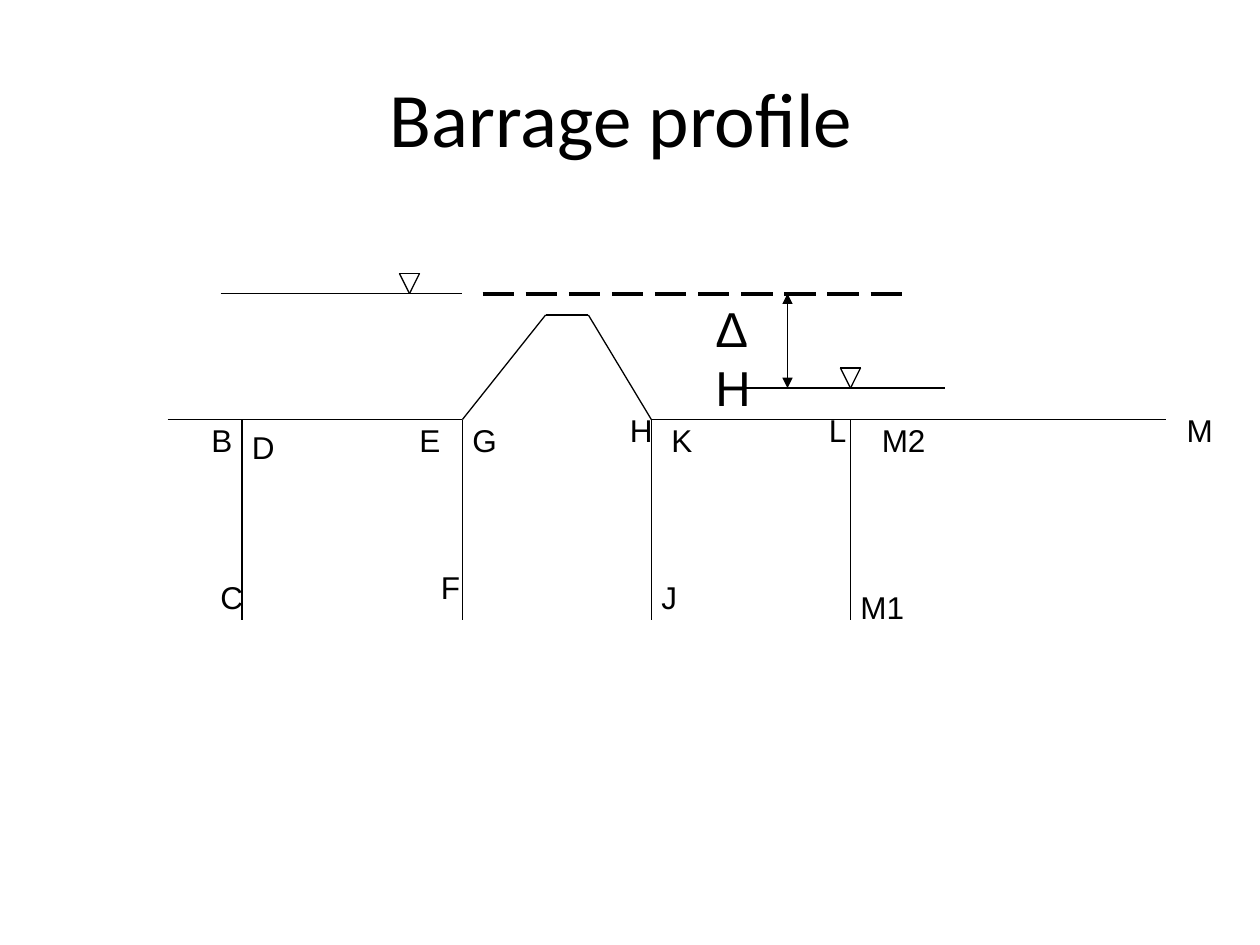
from typing import NamedTuple

from pptx import Presentation
from pptx.dml.color import RGBColor
from pptx.enum.dml import MSO_LINE
from pptx.enum.shapes import MSO_CONNECTOR
from pptx.enum.text import MSO_ANCHOR, MSO_AUTO_SIZE, PP_ALIGN
from pptx.oxml.ns import qn
from pptx.util import Inches, Pt
from lxml import etree

STRAIGHT = MSO_CONNECTOR.STRAIGHT
LONG_DASH = MSO_LINE.LONG_DASH
MIDDLE = MSO_ANCHOR.MIDDLE
CENTER, LEFT = PP_ALIGN.CENTER, PP_ALIGN.LEFT
FIT_SHAPE, NO_FIT = MSO_AUTO_SIZE.SHAPE_TO_FIT_TEXT, MSO_AUTO_SIZE.NONE

COLORS = {"ink": "000000"}

BED_Y, PILE_Y, CREST_Y = 3.33, 4.92, 2.5
UPSTREAM_Y, DOWNSTREAM_Y = 2.33, 3.08
PILE_XS = (1.92, 3.67, 5.17, 6.75)
TOE_X, HEEL_X = PILE_XS[1], PILE_XS[2]


class Segment(NamedTuple):
    x1: float
    y1: float
    x2: float
    y2: float


class Label(NamedTuple):
    text: str
    x: float
    y: float
    width: float


PROFILE = [
    Segment(1.33, BED_Y, TOE_X, BED_Y),
    Segment(TOE_X, BED_Y, 4.33, CREST_Y),
    Segment(4.33, CREST_Y, 4.67, CREST_Y),
    Segment(HEEL_X, BED_Y, 9.25, BED_Y),
    Segment(4.67, CREST_Y, HEEL_X, BED_Y),
] + [Segment(x, BED_Y, x, PILE_Y) for x in PILE_XS]

LABELS = [
    Label("B", 1.58, 3.29, 0.37),
    Label("C", 1.65, 4.54, 0.38),
    Label("D", 1.9, 3.35, 0.38),
    Label("E", 3.23, 3.29, 0.37),
    Label("F", 3.4, 4.46, 0.35),
    Label("G", 3.65, 3.29, 0.4),
    Label("M", 9.32, 3.21, 0.41),
    Label("H", 4.9, 3.21, 0.38),
    Label("K", 5.23, 3.29, 0.37),
    Label("L", 6.48, 3.21, 0.34),
    Label("J", 5.15, 4.54, 0.33),
    Label("M1", 6.73, 4.62, 0.55),
    Label("M2", 6.9, 3.29, 0.55),
]


def write(shape, text: str, *, size: float = 18, font: str = "Arial",
          align=LEFT, wrap: bool = False, fit=FIT_SHAPE) -> None:
    tf = shape.text_frame
    tf.word_wrap = wrap
    tf.auto_size = fit
    p = tf.paragraphs[0]
    p.alignment = align
    r = p.add_run()
    r.text = text
    r.font.size = Pt(size)
    r.font.name = font
    r.font.color.rgb = RGBColor.from_string(COLORS["ink"])


def draw_line(shapes, seg: Segment, width: float = 0.75, dash=None,
              arrows: bool = False) -> None:
    s = shapes.add_connector(STRAIGHT, *(Inches(v) for v in seg))
    s.line.width = Pt(width)
    s.line.color.rgb = RGBColor.from_string(COLORS["ink"])
    if dash is not None:
        s.line.dash_style = dash
    if arrows:
        ln = s.line._get_or_add_ln()
        for end in ("a:headEnd", "a:tailEnd"):
            etree.SubElement(ln, qn(end), type="triangle")
    etree.SubElement(s._element.spPr, qn("a:effectLst"))


def draw_water_level(shapes, left: float, right: float, y: float,
                     mark_x: float) -> None:
    mark_left, mark_right, top = mark_x - 0.08, mark_x + 0.08, y - 0.16
    draw_line(shapes, Segment(left, y, right, y))
    draw_line(shapes, Segment(mark_left, top, mark_right, top))
    for x in (mark_right, mark_left):
        draw_line(shapes, Segment(x, top, mark_x, y))


def add_label(shapes, label: Label, height: float = 0.4, **style) -> None:
    box = shapes.add_textbox(Inches(label.x), Inches(label.y),
                             Inches(label.width), Inches(height))
    write(box, label.text, **style)


def main() -> None:
    prs = Presentation()
    prs.slide_width, prs.slide_height = Inches(10), Inches(7.5)
    slide = prs.slides.add_slide(prs.slide_layouts[5])
    shapes = slide.shapes

    title = shapes.title
    title.left, title.top = Inches(0.5), Inches(0.3)
    title.width, title.height = Inches(9), Inches(1.25)
    title.text_frame.vertical_anchor = MIDDLE
    write(title, "Barrage profile ", size=44, font="Calibri", align=CENTER,
          wrap=True, fit=NO_FIT)

    profile = shapes.add_group_shape()
    for seg in PROFILE:
        draw_line(profile.shapes, seg)
    for label in LABELS:
        add_label(shapes, label)

    draw_water_level(shapes, 1.75, TOE_X, UPSTREAM_Y, 3.25)
    draw_water_level(shapes, 5.92, 7.5, DOWNSTREAM_Y, 6.75)
    draw_line(shapes, Segment(3.83, UPSTREAM_Y, 7.25, UPSTREAM_Y),
              width=2.25, dash=LONG_DASH)
    draw_line(shapes, Segment(6.25, UPSTREAM_Y, 6.25, DOWNSTREAM_Y),
              arrows=True)
    add_label(shapes, Label("ΔH", 5.58, 2.32, 0.72), height=0.57, size=28,
              wrap=True)

    prs.save("out.pptx")


if __name__ == "__main__":
    main()
